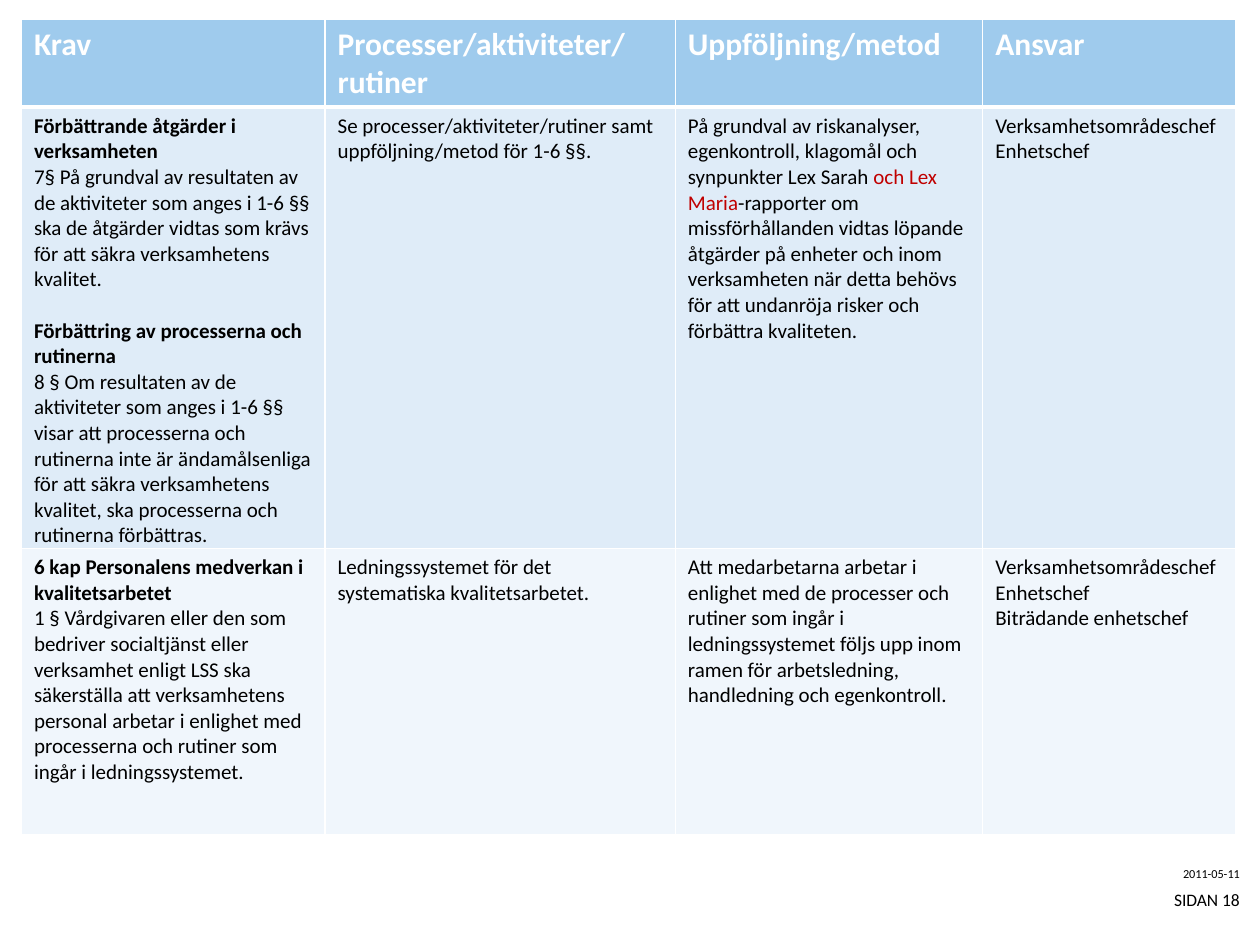
from lxml import etree
from pptx import Presentation
from pptx import util as u
from pptx.dml.color import RGBColor
from pptx.enum import text
from pptx.oxml.ns import qn

COLORS = {"white": "FFFFFF", "black": "000000", "red": "C00000",
          "header": "9FCBED", "first": "DFECF8", "second": "F0F6FC"}
HEADER = {"size": u.Pt(18), "bold": True, "color": "white"}
BODY = {"size": u.Pt(12), "bold": False, "color": "black"}
HEADING = {**BODY, "bold": True}
MARKED = {**BODY, "color": "red"}
LINE_GAP = u.Pt(14.6)

COLUMNS = [2.41, 2.78, 2.44, 2.01]
ROWS = [0.69, 3.46, 2.27]

# Each cell is a list of paragraphs, each paragraph a list of (text, format) runs.
HEADER_CELLS = [[[(title, HEADER)]] for title in
                ("Krav", "Processer/aktiviteter/ rutiner", "Uppföljning/metod", "Ansvar")]
IMPROVEMENT_CELLS = [
    [[("Förbättrande åtgärder i verksamheten", HEADING)],
     [("7§ På grundval av resultaten av de aktiviteter som anges i 1-6 §§ ska de "
       "åtgärder vidtas som krävs för att säkra verksamhetens kvalitet.", BODY)],
     [("Förbättring av processerna och rutinerna", HEADING)],
     [("8 § Om resultaten av de aktiviteter som anges i 1-6 §§ visar att processerna "
       "och rutinerna inte är ändamålsenliga för att säkra verksamhetens kvalitet, "
       "ska processerna och rutinerna förbättras.", BODY)]],
    [[("Se processer/aktiviteter/rutiner samt uppföljning/metod för 1-6 §§.", BODY)]],
    [[("På grundval av riskanalyser, egenkontroll, klagomål och synpunkter Lex Sarah ", BODY),
      ("och Lex Maria", MARKED),
      ("-rapporter om missförhållanden vidtas löpande åtgärder på enheter och inom "
       "verksamheten när detta behövs för att undanröja risker och förbättra "
       "kvaliteten.", BODY)]],
    [[("Verksamhetsområdeschef", BODY)], [("Enhetschef", BODY)]],
]
STAFF_CELLS = [
    [[("6 kap Personalens medverkan i kvalitetsarbetet", HEADING)],
     [("1 § Vårdgivaren eller den som bedriver socialtjänst eller verksamhet enligt LSS "
       "ska säkerställa att verksamhetens personal arbetar i enlighet med processerna "
       "och rutiner som ingår i ledningssystemet.", BODY)]],
    [[("Ledningssystemet för det systematiska kvalitetsarbetet.", BODY)]],
    [[("Att medarbetarna arbetar i enlighet med de processer och rutiner som ingår i "
       "ledningssystemet följs upp inom ramen för arbetsledning, handledning och "
       "egenkontroll.", BODY)]],
    [[("Verksamhetsområdeschef", BODY)], [("Enhetschef", BODY)],
     [("Biträdande enhetschef", BODY)]],
]


class SlideBuilder:
    def __init__(self, slide, font_name="Calibri"):
        self.slide = slide
        self.font_name = font_name

    def run(self, paragraph, content, style):
        run = paragraph.add_run()
        run.text = content
        run.font.name = self.font_name
        for name, value in style.items():
            if name == "color":
                run.font.color.rgb = RGBColor.from_string(COLORS[value])
            else:
                setattr(run.font, name, value)

    def paragraphs(self, frame, content):
        """Write the runs, with a gap above each heading after the first."""
        for index, runs in enumerate(content):
            paragraph = frame.add_paragraph() if index else frame.paragraphs[0]
            if index and runs[0][1] is HEADING:
                paragraph.space_before = LINE_GAP
            for run_text, style in runs:
                self.run(paragraph, run_text, style)

    def borders(self, cell, widths):
        properties = cell._tc.get_or_add_tcPr()
        for side, points in widths.items():
            line = etree.SubElement(properties, qn(f"a:ln{side}"), w=str(u.Pt(points)))
            fill = etree.SubElement(line, qn("a:solidFill"))
            etree.SubElement(fill, qn("a:srgbClr"), val=COLORS["white"])

    def table(self, left, top, cells, fills):
        frame = self.slide.shapes.add_table(
            len(ROWS), len(COLUMNS), u.Inches(left), u.Inches(top),
            u.Inches(sum(COLUMNS)), u.Inches(sum(ROWS)))
        table = frame.table
        for column, width in zip(table.columns, COLUMNS):
            column.width = u.Inches(width)
        for row_index, (row, height) in enumerate(zip(table.rows, ROWS)):
            row.height = u.Inches(height)
            widths = {"L": 1, "R": 1, "T": 3 if row_index == 1 else 1,
                      "B": 3 if row_index == 0 else 1}
            for cell, content in zip(row.cells, cells[row_index]):
                self.borders(cell, widths)
                cell.fill.solid()
                cell.fill.fore_color.rgb = RGBColor.from_string(COLORS[fills[row_index]])
                self.paragraphs(cell.text_frame, content)

    def footer(self, top, content, size):
        box = self.slide.shapes.add_textbox(
            u.Inches(8.8), u.Inches(top), u.Inches(1.04), u.Inches(0.19))
        frame = box.text_frame
        settings = {"word_wrap": True, "vertical_anchor": text.MSO_ANCHOR.MIDDLE,
                    "margin_left": 0, "margin_right": 0, "margin_top": 0, "margin_bottom": 0}
        for name, value in settings.items():
            setattr(frame, name, value)
        frame.paragraphs[0].alignment = text.PP_ALIGN.RIGHT
        self.run(frame.paragraphs[0], content, {**BODY, "size": u.Pt(size)})


def main():
    presentation = Presentation()
    presentation.slide_width = u.Inches(10)
    presentation.slide_height = u.Inches(7.5)
    builder = SlideBuilder(presentation.slides.add_slide(presentation.slide_layouts[6]))
    builder.footer(6.84, "2011-05-11", 7)
    builder.footer(7.04, "SIDAN 18", 10)
    builder.table(0.17, 0.15, [HEADER_CELLS, IMPROVEMENT_CELLS, STAFF_CELLS],
                  ["header", "first", "second"])
    presentation.save("out.pptx")


if __name__ == "__main__":
    main()
